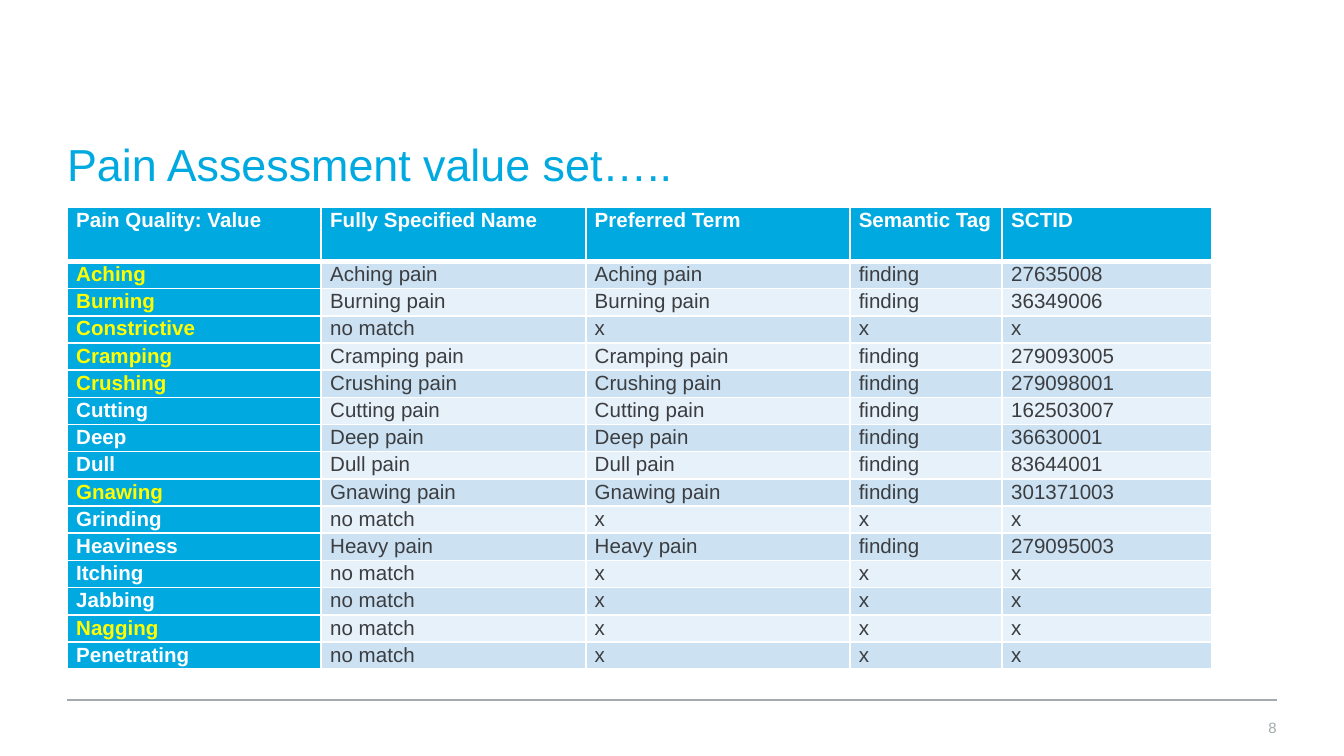
from lxml import etree
from pptx import Presentation
from pptx.dml.color import RGBColor
from pptx.enum.shapes import MSO_CONNECTOR
from pptx.enum.text import MSO_ANCHOR, PP_ALIGN
from pptx.oxml.ns import qn
from pptx.util import Cm, Pt

STRAIGHT = MSO_CONNECTOR.STRAIGHT
MIDDLE = MSO_ANCHOR.MIDDLE
LEFT, RIGHT = PP_ALIGN.LEFT, PP_ALIGN.RIGHT

COLORS = {
    "blue": "00A9E0", "gray": "A2AAAD", "white": "FFFFFF", "yellow": "FFFF00",
    "text": "3B3D40", "band_dark": "CCE2F3", "band_light": "E7F1F9",
}

TITLE = "Pain Assessment value set….."
PAGE_NUMBER = "8"
HEADER = ("Pain Quality: Value", "Fully Specified Name", "Preferred Term",
          "Semantic Tag", "SCTID")
# pain quality, matching term, SCTID (None where there is no match)
PAIN_QUALITIES = [
    ("Aching", "Aching pain", "27635008"),
    ("Burning", "Burning pain", "36349006"),
    ("Constrictive", None, None),
    ("Cramping", "Cramping pain", "279093005"),
    ("Crushing", "Crushing pain", "279098001"),
    ("Cutting", "Cutting pain", "162503007"),
    ("Deep", "Deep pain", "36630001"),
    ("Dull", "Dull pain", "83644001"),
    ("Gnawing", "Gnawing pain", "301371003"),
    ("Grinding", None, None),
    ("Heaviness", "Heavy pain", "279095003"),
    ("Itching", None, None),
    ("Jabbing", None, None),
    ("Nagging", None, None),
    ("Penetrating", None, None),
]
HIGHLIGHTED = {"Aching", "Burning", "Constrictive", "Cramping", "Crushing",
               "Gnawing", "Nagging"}

MARGIN, CONTENT_W = 1.27, 22.86
RULE_Y = 13.23
TABLE_TOP, TABLE_H, HEADER_H = 3.91, 8.74, 1.03
COL_WIDTHS = (4.8, 5, 4.99, 2.88, 3.96)
CELL_MARGINS = {"margin_left": Cm(0.17), "margin_right": Cm(0.17),
                "margin_top": 0, "margin_bottom": 0}
BOX_FORMAT = {"margin_left": 0, "margin_right": 0, "margin_top": 0,
              "margin_bottom": 0, "word_wrap": True, "vertical_anchor": MIDDLE}


def set_attrs(obj, values):
    for name, value in values.items():
        setattr(obj, name, value)


def rgb(name):
    return RGBColor.from_string(COLORS[name])


def add_run(p, text, size, color, bold=False):
    r = p.add_run()
    r.text = text
    set_attrs(r.font, {"name": "Arial", "size": Pt(size), "bold": bold})
    r.font.color.rgb = rgb(color)


def add_text(slide, box, text, size, color, align=LEFT):
    tf = slide.shapes.add_textbox(*map(Cm, box)).text_frame
    set_attrs(tf, BOX_FORMAT)
    p = tf.paragraphs[0]
    p.alignment = align
    add_run(p, text, size, color)


def set_borders(cell, widths):
    """Draw white cell borders; widths maps a side (L, R, T, B) to points."""
    tcPr = cell._tc.get_or_add_tcPr()
    for side, width in widths.items():
        ln = etree.SubElement(tcPr, qn(f"a:ln{side}"), w=str(Pt(width)))
        fill = etree.SubElement(ln, qn("a:solidFill"))
        etree.SubElement(fill, qn("a:srgbClr"), val=COLORS["white"])


def fill_cell(cell, text, row, col):
    is_header = row == 0
    is_strong = is_header or col == 0
    if not is_strong:
        color, fill = "text", "band_dark" if row % 2 else "band_light"
    else:
        color, fill = "yellow" if text in HIGHLIGHTED else "white", "blue"
    set_attrs(cell, CELL_MARGINS)
    set_borders(cell, {"L": 1, "R": 1, "T": 3 if row == 1 else 1,
                       "B": 3 if is_header else 1})
    cell.fill.solid()
    cell.fill.fore_color.rgb = rgb(fill)
    p = cell.text_frame.paragraphs[0]
    p.line_spacing = 1.07
    add_run(p, text, 11, color, is_strong)


def add_value_table(slide):
    rows = [HEADER]
    for quality, term, sctid in PAIN_QUALITIES:
        match = (term, term, "finding", sctid) if term else ("no match", "x", "x", "x")
        rows.append((quality, *match))
    table = slide.shapes.add_table(
        len(rows), len(HEADER), Cm(MARGIN), Cm(TABLE_TOP),
        Cm(sum(COL_WIDTHS)), Cm(TABLE_H)).table
    set_attrs(table, {"first_col": True})
    for column, width in zip(table.columns, COL_WIDTHS):
        column.width = Cm(width)
    row_h = (TABLE_H - HEADER_H) / len(PAIN_QUALITIES)
    for i, values in enumerate(rows):
        table.rows[i].height = Cm(row_h if i else HEADER_H)
        for j, text in enumerate(values):
            fill_cell(table.cell(i, j), text, i, j)


def add_footer_rule(slide):
    line = slide.shapes.add_connector(
        STRAIGHT, Cm(MARGIN + CONTENT_W), Cm(RULE_Y), Cm(MARGIN), Cm(RULE_Y))
    line.line.color.rgb = rgb("gray")
    line.line.width = Pt(0.75)
    etree.SubElement(line._element.spPr, qn("a:effectLst"))


def main():
    prs = Presentation()
    prs.slide_width, prs.slide_height = Cm(25.4), Cm(14.29)
    slide = prs.slides.add_slide(prs.slide_layouts[6])
    add_footer_rule(slide)
    add_text(slide, (MARGIN, 2.31, CONTENT_W, 1.57), TITLE, 24, "blue")
    add_text(slide, (22.91, RULE_Y, 1.22, 1.04), PAGE_NUMBER, 8, "gray", RIGHT)
    add_value_table(slide)
    prs.save("out.pptx")


if __name__ == "__main__":
    main()
